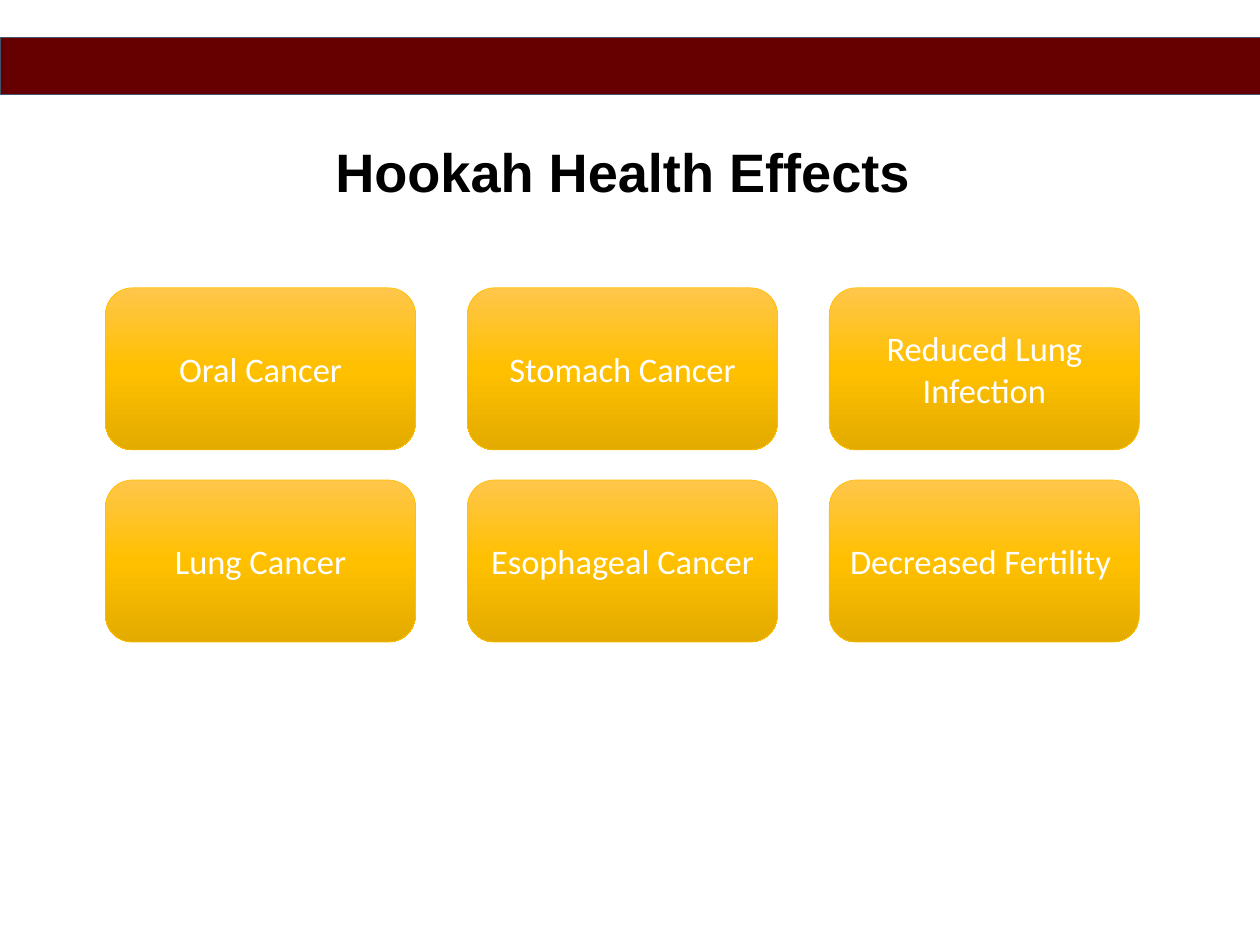
from copy import deepcopy
from dataclasses import dataclass

from pptx import Presentation
from pptx.dml.color import RGBColor as RGB
from pptx.enum.shapes import MSO_SHAPE as Shape
from pptx.enum.text import MSO_ANCHOR as Anchor, PP_ALIGN as Align
from pptx.oxml.ns import qn
from pptx.util import Inches, Pt

BLACK = RGB(0x00, 0x00, 0x00)
WHITE = RGB(0xFF, 0xFF, 0xFF)
MAROON = RGB(0x66, 0x00, 0x00)
SLATE = RGB(0x44, 0x54, 0x6A)
GOLD_LIGHT = RGB(0xFF, 0xC6, 0x4B)
GOLD = RGB(0xFF, 0xC0, 0x00)
GOLD_DARK = RGB(0xE3, 0xAB, 0x00)

SLIDE_W, SLIDE_H = 14.22, 10.67
GOLD_STOPS = ((0, GOLD_LIGHT), (0.5, GOLD), (1, GOLD_DARK))
TITLE_FONT = {"name": "Arial", "size": Pt(44), "bold": True}
CARD_FONT = {"name": "Calibri", "size": Pt(28)}


@dataclass(frozen=True)
class Box:
    x: float
    y: float
    w: float
    h: float

    def emu(self) -> tuple:
        return tuple(Inches(v) for v in (self.x, self.y, self.w, self.h))


@dataclass(frozen=True)
class Grid:
    x: float
    y: float
    w: float
    h: float
    col_gap: float
    row_gap: float

    def cell(self, col: int, row: int) -> Box:
        return Box(self.x + col * (self.w + self.col_gap),
                   self.y + row * (self.h + self.row_gap), self.w, self.h)


@dataclass(frozen=True)
class Card:
    col: int
    row: int
    text: str


CARD_GRID = Grid(x=1.19, y=3.25, w=3.5, h=1.83, col_gap=0.585, row_gap=0.34)
BAND = Box(0, 0.42, SLIDE_W, 0.65)
TITLE = Box(0.98, 1.58, 12.27, 1.5)
CARDS = (
    Card(0, 0, "Oral Cancer"),
    Card(0, 1, "Lung Cancer"),
    Card(1, 0, "Stomach Cancer"),
    Card(1, 1, "Esophageal Cancer"),
    Card(2, 0, "Reduced Lung Infection"),
    Card(2, 1, "Decreased Fertility "),
)


def write(sp, text: str, font: dict, color: RGB):
    tf = sp.text_frame
    tf.word_wrap = True
    tf.vertical_anchor = Anchor.MIDDLE
    p = tf.paragraphs[0]
    p.alignment = Align.CENTER
    r = p.add_run()
    r.text = text
    for name, value in font.items():
        setattr(r.font, name, value)
    r.font.color.rgb = color
    return tf


def add_panel(slide, kind: Shape, box: Box, line: RGB, width: float):
    sp = slide.shapes.add_shape(kind, *box.emu())
    sp.shadow.inherit = False
    sp.line.color.rgb = line
    sp.line.width = Pt(width)
    return sp


def fill_gradient(sp, stops: tuple) -> None:
    sp.fill.gradient()
    sp.fill.gradient_angle = 270
    gs_list = next(sp.element.iter(qn("a:gsLst")))
    while len(gs_list) < len(stops):
        gs_list.append(deepcopy(gs_list[-1]))
    for stop, (position, color) in zip(sp.fill.gradient_stops, stops):
        stop.position = position
        stop.color.rgb = color


def add_title(slide, text: str) -> None:
    sp = slide.shapes.add_textbox(*TITLE.emu())
    tf = write(sp, text, TITLE_FONT, BLACK)
    tf.margin_bottom = Inches(0.75)
    tf.paragraphs[0].line_spacing = 0.9


def add_band(slide) -> None:
    sp = add_panel(slide, Shape.RECTANGLE, BAND, SLATE, 0.75)
    sp.fill.solid()
    sp.fill.fore_color.rgb = MAROON


def add_card(slide, card: Card) -> None:
    box = CARD_GRID.cell(card.col, card.row)
    sp = add_panel(slide, Shape.ROUNDED_RECTANGLE, box, GOLD, 0.5)
    fill_gradient(sp, GOLD_STOPS)
    write(sp, card.text, CARD_FONT, WHITE)


def main() -> None:
    prs = Presentation()
    prs.slide_width, prs.slide_height = Inches(SLIDE_W), Inches(SLIDE_H)
    slide = prs.slides.add_slide(prs.slide_layouts[6])
    add_title(slide, "Hookah Health Effects ")
    add_band(slide)
    for card in CARDS:
        add_card(slide, card)
    prs.save("out.pptx")


if __name__ == "__main__":
    main()
